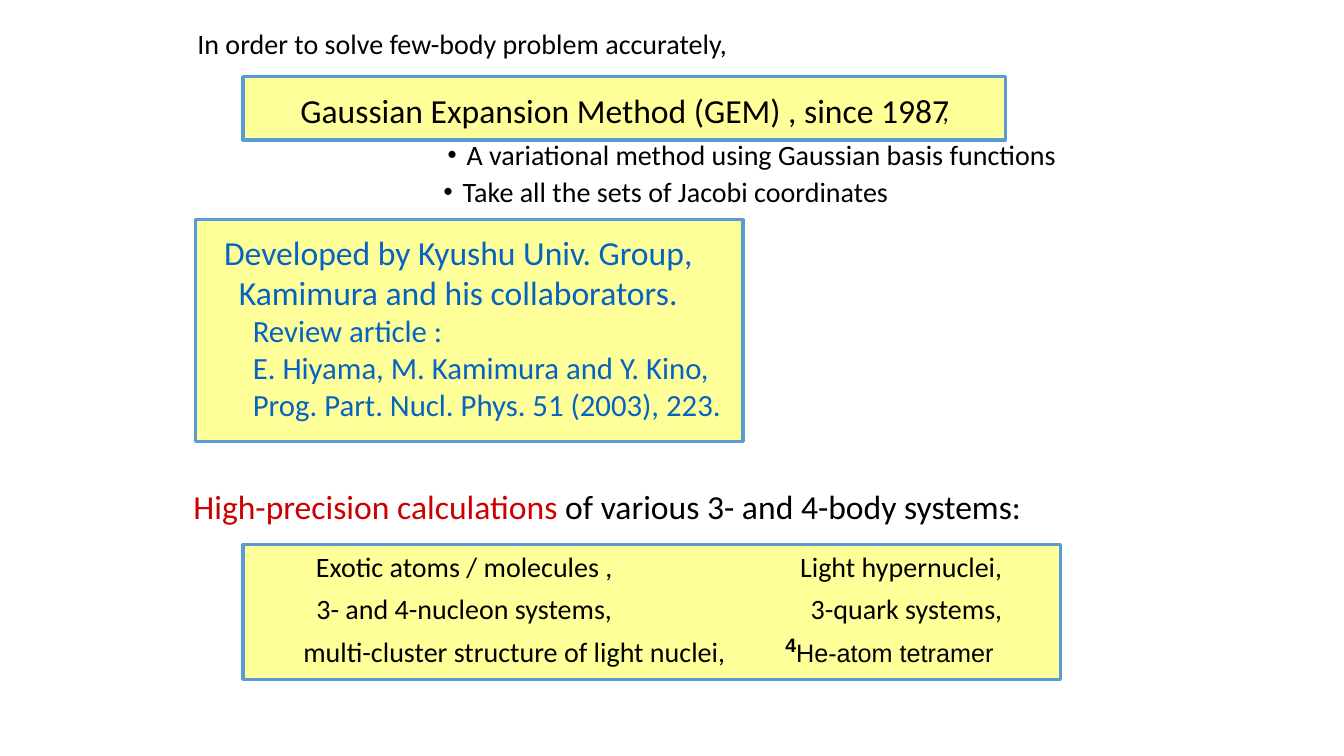
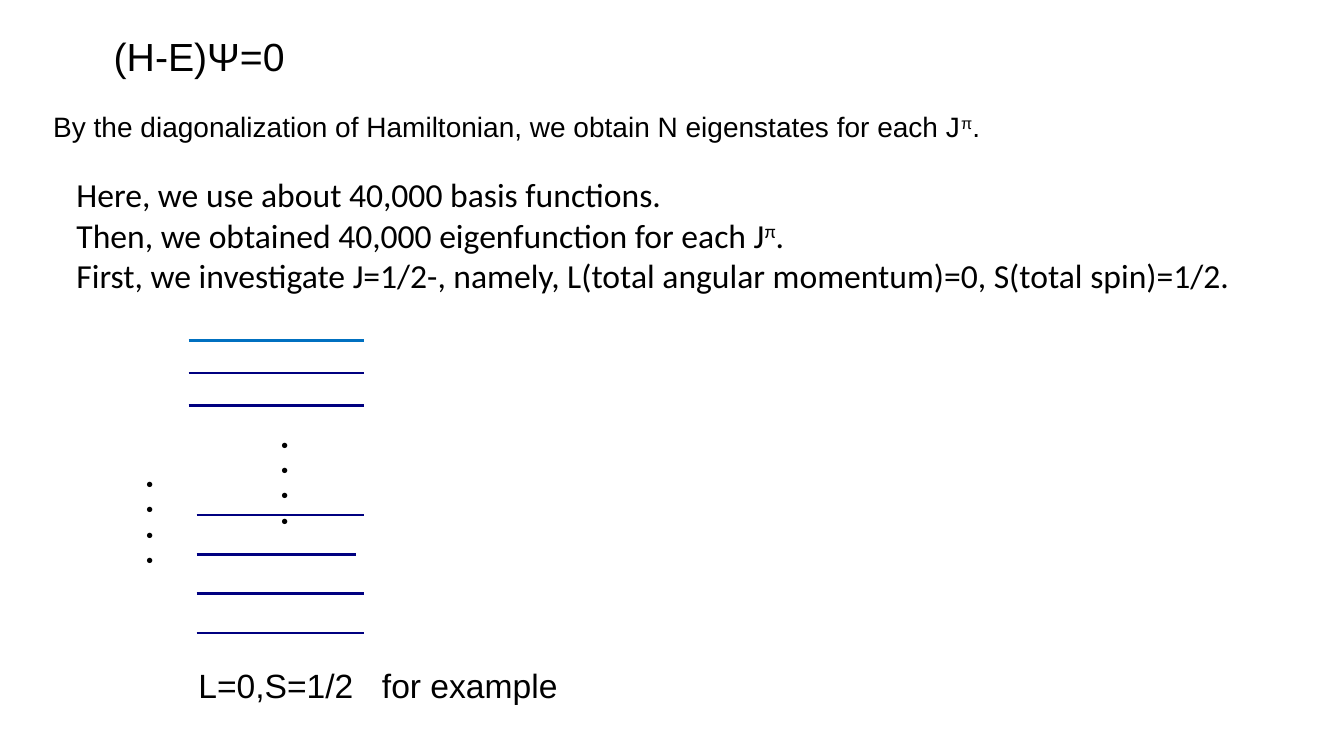
"""Build two slides on the Gaussian Expansion Method and its eigenstates."""
from lxml import etree
from pptx import Presentation
from pptx.dml.color import RGBColor
from pptx.enum import shapes, text
from pptx.oxml import ns
from pptx.util import Inches, Pt

BLACK = RGBColor(0x00, 0x00, 0x00)
RED = RGBColor(0xCC, 0x00, 0x00)
BLUE = RGBColor(0x05, 0x63, 0xC1)
EDGE = RGBColor(0x5B, 0x9B, 0xD5)
CREAM = RGBColor(0xFF, 0xFF, 0x99)
NAVY = RGBColor(0x00, 0x00, 0x80)
SKY = RGBColor(0x00, 0x70, 0xC0)
SANS = "Arial"
LEFT = text.PP_ALIGN.LEFT
MID = text.PP_ALIGN.CENTER
RIGHT = text.PP_ALIGN.RIGHT


class Deck:
    """Hold the shared style and the current slide."""

    def __init__(self):
        """Start an empty wide deck."""
        self.prs = Presentation()
        self.prs.slide_width = Inches(13.33)
        self.prs.slide_height = Inches(7.5)
        self.slide = None

    def page(self):
        """Add a blank slide and make it current."""
        self.slide = self.prs.slides.add_slide(self.prs.slide_layouts[6])

    def panel(self, x, y, w, h):
        """Draw a cream panel with a blue edge."""
        box = self.slide.shapes.add_shape(
            shapes.MSO_SHAPE.RECTANGLE, Inches(x), Inches(y), Inches(w), Inches(h))
        box.shadow.inherit = False
        box.fill.solid()
        box.fill.fore_color.rgb = CREAM
        box.line.color.rgb = EDGE
        box.line.width = Pt(2.25)

    def line(self, x, y, end, color=NAVY):
        """Draw a level line from x to end."""
        bar = self.slide.shapes.add_connector(
            shapes.MSO_CONNECTOR.STRAIGHT, Inches(x), Inches(y), Inches(end), Inches(y))
        bar.line.color.rgb = color
        bar.line.width = Pt(2)
        etree.SubElement(bar.element.spPr, ns.qn("a:effectLst"))

    def text(self, x, y, w, h, lines, align=LEFT, gap=0, vert=False, **base):
        """Write paragraphs; a line is a string or a list of (text, style) runs."""
        box = self.slide.shapes.add_textbox(Inches(x), Inches(y), Inches(w), Inches(h))
        frame = box.text_frame
        frame.word_wrap = True
        if vert:
            frame._txBody.bodyPr.set("vert", "eaVert")
        for i, line in enumerate(lines):
            para = frame.add_paragraph() if i else frame.paragraphs[0]
            para.alignment = align
            para.space_before = Pt(gap if i else 0)
            for words, style in [(line, {})] if isinstance(line, str) else line:
                run = para.add_run()
                run.text = words
                self.style(run, **{**base, **style})

    def style(self, run, size=20, font="Calibri", color=BLACK, bold=False, lift=False):
        """Format one run."""
        run.font.size = Pt(size)
        run.font.name = font
        run.font.color.rgb = color
        run.font.bold = bold
        if lift:
            run._r.get_or_add_rPr().set("baseline", "30000")


def method(deck):
    """Fill the slide on the method."""
    deck.page()
    dot = ("・", {"bold": True})
    deck.text(4.15, 1.15, 9.1, 1.31, [
        [(" ", {"size": 32, "bold": True}), dot,
         ("A variational method using Gaussian basis functions", {})],
        [(" ", {"bold": True}), dot, ("Take all the sets of Jacobi coordinates", {})]])
    deck.text(1.82, 4.77, 9.42, 0.51, [
        [("High-precision calculations ", {"color": RED}),
         ("of various 3- and 4-body systems:", {})]], size=24)
    deck.panel(2.41, 0.76, 7.56, 0.63)
    deck.text(1.86, 0.21, 5.6, 0.44, ["In order to solve few-body problem accurately,"])
    deck.text(1.67, 0.84, 9.06, 0.5,
              ["Gaussian Expansion Method (GEM) , since 1987"], MID, size=24)
    deck.panel(1.94, 2.18, 5.43, 2.2)
    deck.text(2.41, 3.04, 4.96, 1.2, [
        "Review article :",
        "E. Hiyama, M. Kamimura and Y. Kino,",
        "Prog. Part. Nucl. Phys. 51 (2003), 223."], size=22, color=BLUE)
    deck.text(1, 2.25, 7.09, 0.91, [
        "Developed by Kyushu Univ. Group,",
        "Kamimura and his collaborators."], MID, size=24, color=BLUE)
    deck.text(9.25, 0.91, 0.32, 0.4, [","], size=18)
    deck.panel(2.41, 5.4, 8.11, 1.34)
    deck.text(7.6, 5.4, 2.44, 0.86, ["Light hypernuclei,", "3-quark systems,"], RIGHT, gap=6)
    deck.text(1.67, 5.4, 5.87, 0.86,
              ["Exotic atoms / molecules ,", "3- and 4-nucleon systems,"], MID, gap=6)
    deck.text(2.91, 6.25, 4.6, 0.44, ["multi-cluster structure of light nuclei,"])
    deck.text(7.69, 6.19, 2.5, 0.4, [
        [("4", {"size": 24, "bold": True, "lift": True}), ("He-atom tetramer", {})]],
        size=18, font=SANS)


def levels(deck):
    """Fill the slide on the eigenstates."""
    deck.page()
    power = ("π", {"lift": True})
    deck.text(1.03, 0.27, 2.1, 0.57, ["(H-E)Ψ=0"], size=28, font=SANS)
    deck.text(0.43, 1.04, 9.6, 0.43, [
        [("By the diagonalization of Hamiltonian, we obtain N eigenstates for each J", {}),
         power, (".", {})]], font=SANS)
    deck.text(0.66, 1.68, 11.8, 1.31, [
        "Here, we use about 40,000 basis functions.",
        [("Then, we obtained 40,000 eigenfunction for each J", {}), power, (".", {})],
        "First, we investigate J=1/2-, namely, L(total angular momentum)=0, "
        "S(total spin)=1/2."], size=24)
    for i, color in enumerate((SKY, NAVY, NAVY)):
        deck.line(1.87, 3.38 + 0.32 * i, 3.61, color)
    for i, end in enumerate((3.61, 3.53, 3.61, 3.61)):
        deck.line(1.95, 5.11 + 0.39 * i, end)
    for x, y in ((2.52, 4.2), (1.18, 4.59)):
        deck.text(x, y, 0.5, 1.2, ["・・・・"], vert=True, size=18, font=SANS)
    for x, w, words in ((1.87, 1.8, "L=0,S=1/2"), (3.69, 2.07, "for example")):
        deck.text(x, 6.55, w, 0.5, [words], size=24, font=SANS)


def main():
    """Build and save the deck."""
    deck = Deck()
    method(deck)
    levels(deck)
    deck.prs.save("out.pptx")


if __name__ == "__main__":
    main()
